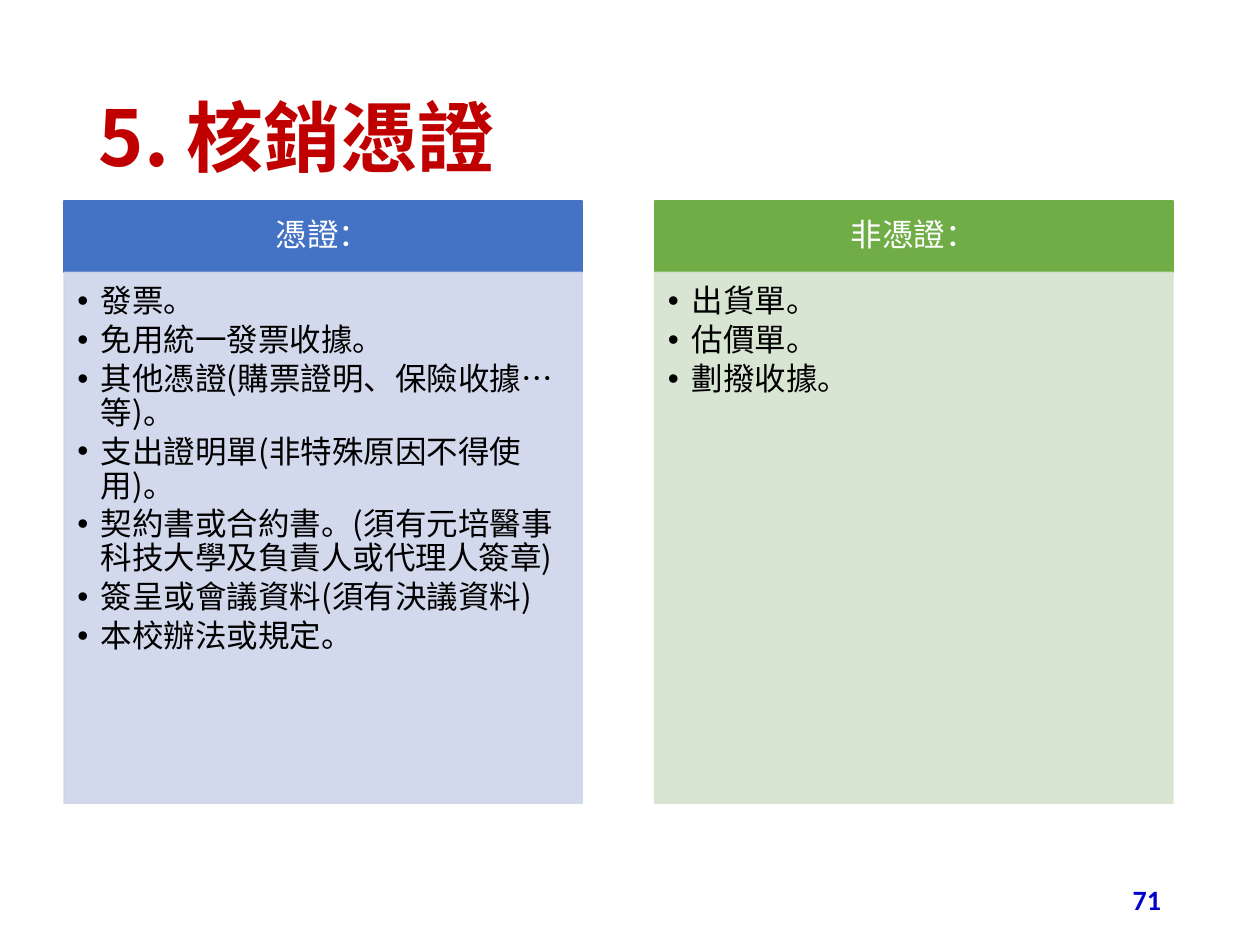
import pptx
import pptx.util
import pptx.dml.color
import pptx.enum.shapes
import pptx.enum.text
import pptx.oxml
import pptx.oxml.ns
from lxml import etree

Pt = pptx.util.Pt
ALIGN = pptx.enum.text.PP_ALIGN
ANCHOR = pptx.enum.text.MSO_ANCHOR
CJK_FONT = "Noto Sans CJK SC"
COLORS = {
    "title": "C00000", "number": "0000CC", "white": "FFFFFF", "black": "000000",
    "blue": "4472C4", "pale blue": "CFD5EA",
    "green": "70AD47", "pale green": "D5E3CF",
}
COLUMNS = [
    ("憑證：", "blue", [
        "發票。",
        "免用統一發票收據。",
        "其他憑證(購票證明、保險收據…等)。",
        "支出證明單(非特殊原因不得使用)。",
        "契約書或合約書。(須有元培醫事科技大學及負責人或代理人簽章)",
        "簽呈或會議資料(須有決議資料)",
        "本校辦法或規定。",
    ]),
    ("非憑證：", "green", ["出貨單。", "估價單。", "劃撥收據。"]),
]


def rgb(name):
    return pptx.dml.color.RGBColor.from_string(COLORS[name])


def add_child(parent, tag, **attributes):
    child = etree.SubElement(parent, pptx.oxml.ns.qn(tag))
    for key, value in attributes.items():
        child.set(key, value)
    return child


def add_span(para, text, size, color, font=CJK_FONT, bold=False):
    span = para.add_run()
    span.text = text
    span.font.size = Pt(size)
    span.font.bold = bold
    span.font.color.rgb = rgb(color)
    span.font.name = font
    add_child(span.font._element, "a:ea", typeface=font)


def set_frame(frame, anchor, margins):
    frame.word_wrap = True
    frame.vertical_anchor = anchor
    (frame.margin_left, frame.margin_top,
     frame.margin_right, frame.margin_bottom) = map(Pt, margins)


def add_text_line(page, left, top, width, height, align, text, *style, **options):
    box = page.shapes.add_textbox(Pt(left), Pt(top), Pt(width), Pt(height))
    set_frame(box.text_frame, ANCHOR.MIDDLE, (7.2, 3.6, 7.2, 3.6))
    para = box.text_frame.paragraphs[0]
    para.alignment = align
    para.line_spacing = 0.9
    add_span(para, text, *style, **options)


def add_panel(page, left, top, width, height, color, alpha=100):
    panel = page.shapes.add_shape(
        pptx.enum.shapes.MSO_SHAPE.RECTANGLE, Pt(left), Pt(top), Pt(width), Pt(height))
    panel.shadow.inherit = False
    panel.fill.solid()
    panel.fill.fore_color.rgb = rgb(color)
    panel.line.color.rgb = rgb(color)
    panel.line.width = Pt(1)
    if alpha < 100:
        for shade in panel._element.spPr.iter(pptx.oxml.ns.qn("a:srgbClr")):
            add_child(shade, "a:alpha", val=str(alpha * 1000))
    return panel.text_frame


def add_bullet(para):
    properties = para._p.get_or_add_pPr()
    properties.set("marL", str(Pt(13.5)))
    properties.set("indent", str(-Pt(13.5)))
    add_child(properties, "a:buFont", typeface="Arial")
    add_child(properties, "a:buChar", char="•")


def add_column(page, left, top, width, height, heading, color, items):
    """Place a coloured heading bar above a pale panel of bullets."""
    bar = 40.8
    frame = add_panel(page, left, top, width, bar, color)
    set_frame(frame, ANCHOR.MIDDLE, (10, 5.7, 10, 5.7))
    para = frame.paragraphs[0]
    para.alignment = ALIGN.CENTER
    para.line_spacing = 0.9
    add_span(para, heading, 18, "white")

    frame = add_panel(page, left, top + bar, width, height - bar, "pale " + color, alpha=90)
    set_frame(frame, ANCHOR.TOP, (7.5, 7.5, 10, 11.4))
    for index, item in enumerate(items):
        para = frame.add_paragraph() if index else frame.paragraphs[0]
        add_bullet(para)
        para.alignment = ALIGN.LEFT
        para.line_spacing = 0.9
        para.space_after = Pt(2.7)
        add_span(para, item, 18, "black")


def main():
    deck = pptx.Presentation()
    deck.slide_width, deck.slide_height = Pt(720), Pt(540)
    page = deck.slides.add_slide(deck.slide_layouts[6])
    add_text_line(page, 49.5, 28.75, 621, 104.4, ALIGN.LEFT,
                  "5. 核銷憑證", 44, "title", bold=True)
    add_text_line(page, 508.5, 500.5, 162, 28.75, ALIGN.RIGHT,
                  "71", 16, "number", font="Calibri", bold=True)
    for index, column in enumerate(COLUMNS):
        add_column(page, 36.7 + index * 337.5, 114.9, 296, 344, *column)
    deck.save("out.pptx")


if __name__ == "__main__":
    main()
